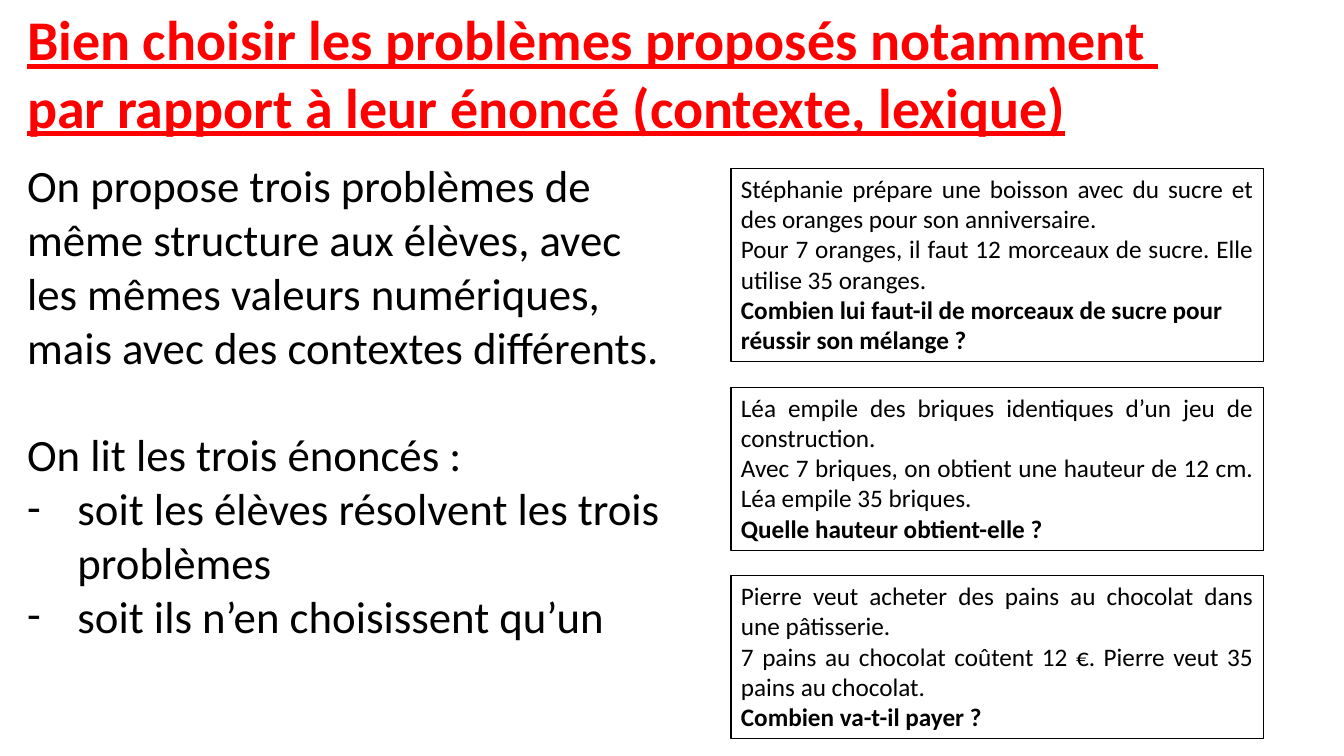
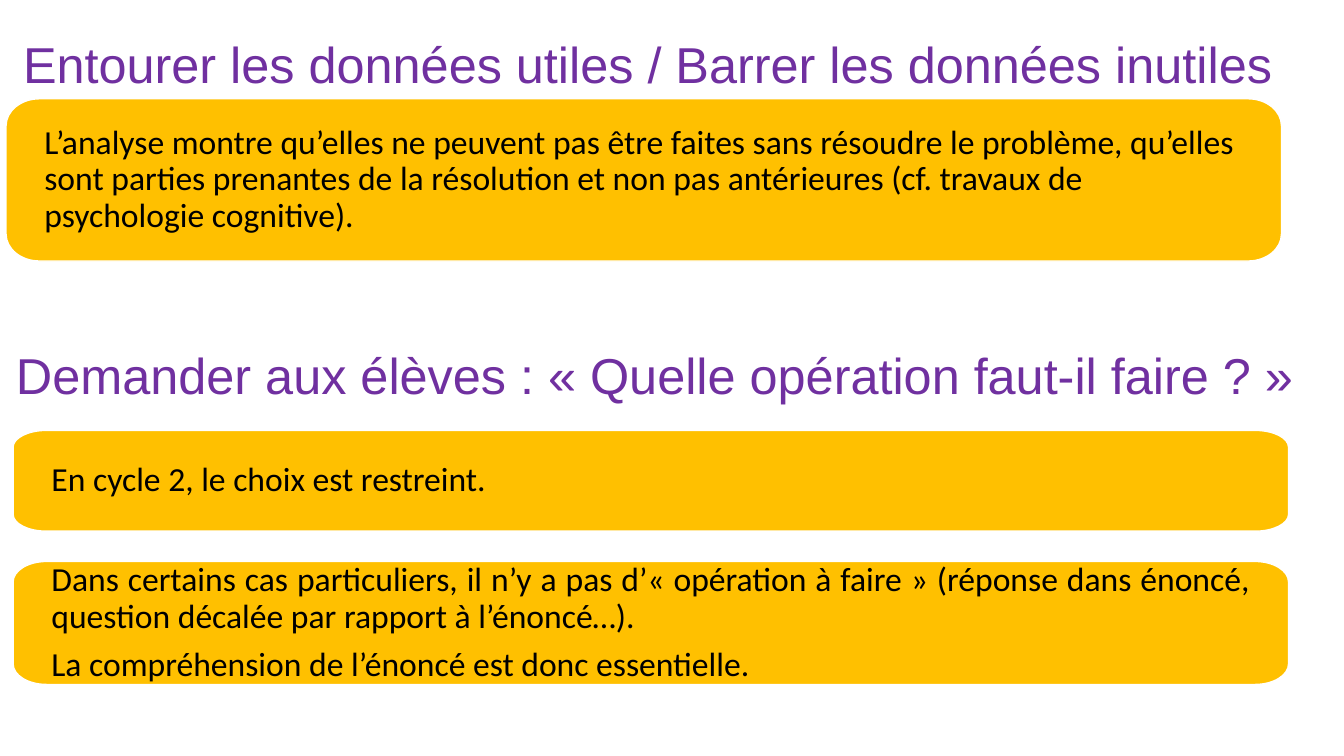
"""Build two slides on choosing and presenting word problems to pupils."""
from dataclasses import dataclass
from typing import Optional

import lxml.etree
import pptx
import pptx.dml.color
import pptx.enum.shapes
import pptx.enum.text
import pptx.oxml.ns
import pptx.shapes.autoshape
import pptx.slide
import pptx.util

PX = 9144
COLORS = {
    "alert": "FF0000",
    "heading": "7030A0",
    "band": "FFC000",
    "text": "000000",
    "paper": "FFFFFF",
}
LEFT = pptx.enum.text.PP_ALIGN.LEFT
JUSTIFY = pptx.enum.text.PP_ALIGN.JUSTIFY
TOP = pptx.enum.text.MSO_ANCHOR.TOP
MIDDLE = pptx.enum.text.MSO_ANCHOR.MIDDLE

CARD_LEFT, CARD_TOP, CARD_WIDTH, CARD_GAP = 725, 167, 528, 25
BAND_WIDTH, BAND_CORNER, ARC_PULL = 1265, 33, 0.55
HANGING_INDENT = 50


@dataclass(frozen=True)
class Style:
    size: int
    color: str = "text"
    font: str = "Calibri"
    underline: Optional[bool] = None
    line_spacing: Optional[float] = None


@dataclass(frozen=True)
class Line:
    text: str
    bold: bool = False
    align: pptx.enum.text.PP_ALIGN = LEFT
    before: float = 0
    bullet: str = ""


@dataclass(frozen=True)
class Box:
    left: int
    top: int
    width: int
    height: int
    lines: tuple[Line, ...]


@dataclass(frozen=True)
class Card:
    height: int
    lines: tuple[Line, ...]


TITLE_STYLE = Style(40, "alert", underline=True)
BODY_STYLE = Style(32)
CARD_STYLE = Style(18)
HEADING_STYLE = Style(36, "heading", "Arial", line_spacing=1.07)
BAND_STYLE = Style(24, line_spacing=0.9)

TITLE = Box(17, 0, 1154, 145, (
    Line("Bien choisir les problèmes proposés notamment ", bold=True),
    Line("par rapport à leur énoncé (contexte, lexique)", bold=True),
))
BODY = Box(17, 152, 667, 495, (
    Line("On propose trois problèmes de même structure aux élèves, avec les mêmes "
         "valeurs numériques, mais avec des contextes différents."),
    Line("On lit les trois énoncés :", before=38.5),
    Line("soit les élèves résolvent les trois problèmes", bullet="-"),
    Line("soit ils n’en choisissent qu’un", bullet="-"),
))
CARDS = (
    Card(192, (
        Line("Stéphanie prépare une boisson avec du sucre et des oranges pour son "
             "anniversaire.", align=JUSTIFY),
        Line("Pour 7 oranges, il faut 12 morceaux de sucre. Elle utilise 35 oranges.",
             align=JUSTIFY),
        Line("Combien lui faut-il de morceaux de sucre pour réussir son mélange ?",
             bold=True),
    )),
    Card(162, (
        Line("Léa empile des briques identiques d’un jeu de construction.", align=JUSTIFY),
        Line("Avec 7 briques, on obtient une hauteur de 12 cm. Léa empile 35 briques.",
             align=JUSTIFY),
        Line("Quelle hauteur obtient-elle ?", bold=True, align=JUSTIFY),
    )),
    Card(162, (
        Line("Pierre veut acheter des pains au chocolat dans une pâtisserie.", align=JUSTIFY),
        Line("7 pains au chocolat coûtent 12 €. Pierre veut 35 pains au chocolat.",
             align=JUSTIFY),
        Line("Combien va-t-il payer ?", bold=True, align=JUSTIFY),
    )),
)
HEADINGS = (
    Box(13, 24, 1321, 72, (
        Line("Entourer les données utiles / Barrer les données inutiles"),
    )),
    Box(6, 332, 1321, 72, (
        Line("Demander aux élèves : « Quelle opération faut-il faire ? »"),
    )),
)
BANDS = (
    Box(6, 98, BAND_WIDTH, 161, (
        Line("L’analyse montre qu’elles ne peuvent pas être faites sans résoudre le "
             "problème, qu’elles sont parties prenantes de la résolution et non pas "
             "antérieures (cf. travaux de psychologie cognitive)."),
    )),
    Box(13, 427, BAND_WIDTH, 100, (Line("En cycle 2, le choix est restreint."),)),
    Box(13, 557, BAND_WIDTH, 122, (
        Line("Dans certains cas particuliers, il n’y a pas d’« opération à faire » "
             "(réponse dans énoncé, question décalée par rapport à l’énoncé…).",
             align=JUSTIFY),
        Line("La compréhension de l’énoncé est donc essentielle.", before=8.4),
    )),
)


def rgb(name: str) -> pptx.dml.color.RGBColor:
    return pptx.dml.color.RGBColor.from_string(COLORS[name])


def write_lines(shape: pptx.shapes.autoshape.Shape, lines: tuple[Line, ...], style: Style,
                anchor: pptx.enum.text.MSO_ANCHOR = TOP, wrap: bool = True,
                grow: bool = True) -> None:
    frame = shape.text_frame
    frame.word_wrap = wrap
    frame.vertical_anchor = anchor
    if grow:
        frame.auto_size = pptx.enum.text.MSO_AUTO_SIZE.SHAPE_TO_FIT_TEXT
    for index, line in enumerate(lines):
        paragraph = frame.add_paragraph() if index else frame.paragraphs[0]
        paragraph.alignment = line.align
        paragraph.line_spacing = style.line_spacing
        paragraph.space_before = pptx.util.Pt(line.before)
        if line.bullet:
            properties = paragraph._p.get_or_add_pPr()
            properties.set("marL", str(HANGING_INDENT * PX))
            properties.set("indent", str(-HANGING_INDENT * PX))
            bullet_font = lxml.etree.SubElement(properties, pptx.oxml.ns.qn("a:buFont"))
            bullet_font.set("typeface", style.font)
            bullet = lxml.etree.SubElement(properties, pptx.oxml.ns.qn("a:buChar"))
            bullet.set("char", line.bullet)
        run = paragraph.add_run()
        run.text = line.text
        run.font.name = style.font
        run.font.size = pptx.util.Pt(style.size)
        run.font.bold = line.bold
        run.font.underline = style.underline
        run.font.color.rgb = rgb(style.color)


def paint(shape: pptx.shapes.autoshape.Shape, fill: str, line: str, width: float) -> None:
    shape.shadow.inherit = False
    shape.fill.solid()
    shape.fill.fore_color.rgb = rgb(fill)
    shape.line.color.rgb = rgb(line)
    shape.line.width = pptx.util.Pt(width)


def add_text(slide: pptx.slide.Slide, box: Box, style: Style, wrap: bool = True) -> None:
    shape = slide.shapes.add_textbox(
        box.left * PX, box.top * PX, box.width * PX, box.height * PX)
    write_lines(shape, box.lines, style, wrap=wrap)


def add_card(slide: pptx.slide.Slide, card: Card, top: int) -> None:
    shape = slide.shapes.add_shape(
        pptx.enum.shapes.MSO_SHAPE.RECTANGLE,
        CARD_LEFT * PX, top * PX, CARD_WIDTH * PX, card.height * PX)
    paint(shape, "paper", "text", 0.75)
    write_lines(shape, card.lines, CARD_STYLE)


def band_outline(box: Box) -> list[tuple[int, int]]:
    right, bottom = box.left + box.width, box.top + box.height
    near_x, far_x = box.left + BAND_CORNER, right - BAND_CORNER
    near_y, far_y = box.top + box.height / 6, bottom - box.height / 6
    points = (
        (box.left, near_y), (near_x, box.top), (far_x, box.top), (right, near_y),
        (right, far_y), (far_x, bottom), (near_x, bottom), (box.left, far_y),
        (box.left, near_y),
    )
    return [(round(x * PX), round(y * PX)) for x, y in points]


def round_corners(shape: pptx.shapes.autoshape.Shape) -> None:
    points = list(shape._element.iter(pptx.oxml.ns.qn("a:pt")))
    for index in range(0, 8, 2):
        start, end = [(int(point.get("x")), int(point.get("y")))
                      for point in points[index:index + 2]]
        corner = (end[0], start[1]) if index % 4 else (start[0], end[1])
        segment = points[index + 1].getparent()
        segment.tag = pptx.oxml.ns.qn("a:cubicBezTo")
        for position, anchor in enumerate((start, end)):
            control = lxml.etree.Element(pptx.oxml.ns.qn("a:pt"))
            for axis, value, target in zip("xy", anchor, corner):
                control.set(axis, str(round(value + ARC_PULL * (target - value))))
            segment.insert(position, control)


def add_band(slide: pptx.slide.Slide, box: Box) -> None:
    start, *others = band_outline(box)
    builder = slide.shapes.build_freeform(*start)
    builder.add_line_segments(others, close=True)
    shape = builder.convert_to_shape()
    round_corners(shape)
    paint(shape, "band", "paper", 1)
    frame = shape.text_frame
    frame.margin_left = frame.margin_right = 38 * PX
    frame.margin_top = frame.margin_bottom = 8 * PX
    write_lines(shape, box.lines, BAND_STYLE, anchor=MIDDLE, grow=False)


def build_problem_slide(slide: pptx.slide.Slide) -> None:
    add_text(slide, TITLE, TITLE_STYLE, wrap=False)
    add_text(slide, BODY, BODY_STYLE)
    top = CARD_TOP
    for card in CARDS:
        add_card(slide, card, top)
        top += card.height + CARD_GAP


def build_practice_slide(slide: pptx.slide.Slide) -> None:
    for heading in HEADINGS:
        add_text(slide, heading, HEADING_STYLE)
    for band in BANDS:
        add_band(slide, band)


def main() -> None:
    presentation = pptx.Presentation()
    presentation.slide_width = 1333 * PX
    presentation.slide_height = 750 * PX
    blank = presentation.slide_layouts[6]
    for build in (build_problem_slide, build_practice_slide):
        build(presentation.slides.add_slide(blank))
    presentation.save("out.pptx")


if __name__ == "__main__":
    main()
